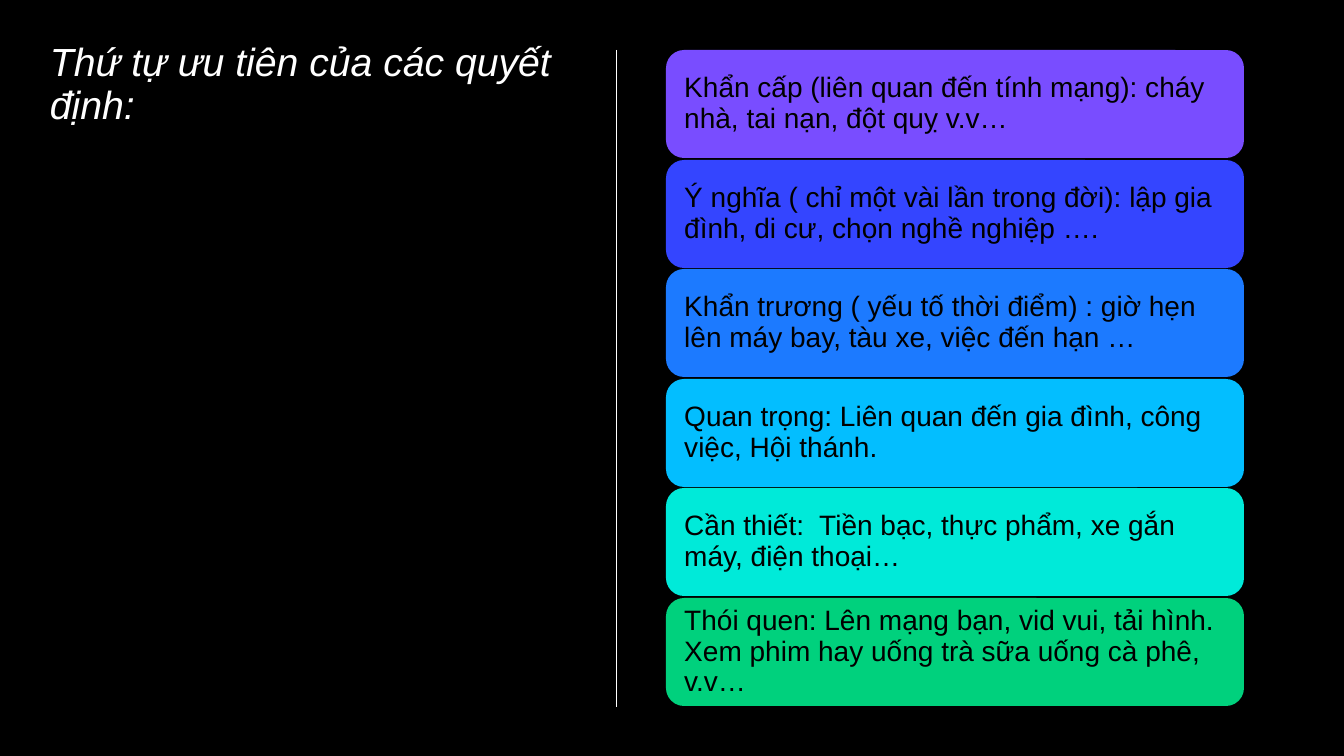
"""Build a slide ranking six kinds of decisions by priority."""
from dataclasses import dataclass

from lxml import etree
from pptx import Presentation
from pptx.dml.color import RGBColor
from pptx.enum.shapes import MSO_CONNECTOR, MSO_SHAPE
from pptx.enum.text import MSO_ANCHOR, PP_ALIGN
from pptx.oxml.ns import qn
from pptx.slide import Slide
from pptx.text.text import TextFrame
from pptx.util import Emu, Pt

ROUND_RECT = MSO_SHAPE.ROUNDED_RECTANGLE
STRAIGHT = MSO_CONNECTOR.STRAIGHT
TOP = MSO_ANCHOR.TOP
MIDDLE = MSO_ANCHOR.MIDDLE
LEFT = PP_ALIGN.LEFT

EMU_PER_PX = 914400 / 100.8


@dataclass(frozen=True)
class Theme:
    background: str = "000000"
    light: str = "FFFFFF"
    dark: str = "000000"
    font: str = "Arial"
    title_size: int = 28
    card_size: int = 20
    rule_width: float = 0.75
    line_spacing: float = 0.9


@dataclass(frozen=True)
class Box:
    left: int
    top: int
    width: int
    height: int

    def emu(self) -> tuple[Emu, Emu, Emu, Emu]:
        return px(self.left), px(self.top), px(self.width), px(self.height)


@dataclass(frozen=True)
class Card:
    fill: str
    text: str


THEME = Theme()
TITLE = "Thứ tự ưu tiên của các quyết định:"
TITLE_BOX = Box(50, 43, 517, 657)
RULE_X, RULE_TOP, RULE_BOTTOM = 617, 50, 707
FIRST_CARD = Box(666, 50, 578, 108)
LAST_CARD_TOP = 598
CARD_INSET = 13
CARDS = [
    Card("794DFF", "Khẩn cấp (liên quan đến tính mạng): cháy nhà, tai nạn, đột quỵ v.v…"),
    Card("3445FF", "Ý nghĩa ( chỉ một vài lần trong đời): lập gia đình, di cư, chọn nghề nghiệp …."),
    Card("1C7AFF", "Khẩn trương ( yếu tố thời điểm) : giờ hẹn lên máy bay, tàu xe, việc đến hạn …"),
    Card("03BEFF", "Quan trọng: Liên quan đến gia đình, công việc, Hội thánh."),
    Card("00EAD9", "Cần thiết:  Tiền bạc, thực phẩm, xe gắn máy, điện thoại…"),
    Card("00D17D", "Thói quen: Lên mạng bạn, vid vui, tải hình. "
                   "Xem phim hay uống trà sữa uống cà phê, v.v…"),
]


def px(n: int) -> Emu:
    return Emu(round(n * EMU_PER_PX))


def rgb(value: str) -> RGBColor:
    return RGBColor.from_string(value)


def write_text(tf: TextFrame, text: str, size: int, color: str, inset: int = 0,
               anchor: MSO_ANCHOR = TOP, italic: bool = False) -> None:
    tf.text = text
    tf.word_wrap = True
    tf.vertical_anchor = anchor
    tf.margin_left = tf.margin_right = tf.margin_top = tf.margin_bottom = px(inset)
    p = tf.paragraphs[0]
    p.alignment = LEFT
    p.line_spacing = THEME.line_spacing
    font = p.runs[0].font
    font.name = THEME.font
    font.size = Pt(size)
    font.italic = italic
    font.color.rgb = rgb(color)


def add_title(s: Slide) -> None:
    tf = s.shapes.add_textbox(*TITLE_BOX.emu()).text_frame
    write_text(tf, TITLE, THEME.title_size, THEME.light, italic=True)


def add_rule(s: Slide) -> None:
    line = s.shapes.add_connector(
        STRAIGHT, px(RULE_X), px(RULE_TOP), px(RULE_X), px(RULE_BOTTOM))
    line.line.color.rgb = rgb(THEME.light)
    line.line.width = Pt(THEME.rule_width)
    etree.SubElement(line._element.spPr, qn("a:effectLst"))


def add_card(s: Slide, card: Card, box: Box) -> None:
    sp = s.shapes.add_shape(ROUND_RECT, *box.emu())
    sp.shadow.inherit = False
    sp.fill.solid()
    sp.fill.fore_color.rgb = rgb(card.fill)
    sp.line.fill.background()
    write_text(sp.text_frame, card.text, THEME.card_size, THEME.dark, CARD_INSET, MIDDLE)


def add_cards(s: Slide) -> None:
    pitch = (LAST_CARD_TOP - FIRST_CARD.top) / (len(CARDS) - 1)
    for i, card in enumerate(CARDS):
        top = round(FIRST_CARD.top + i * pitch)
        add_card(s, card, Box(FIRST_CARD.left, top, FIRST_CARD.width, FIRST_CARD.height))


def main() -> None:
    prs = Presentation()
    prs.slide_width, prs.slide_height = px(1344), px(756)
    s = prs.slides.add_slide(prs.slide_layouts[6])
    s.background.fill.solid()
    s.background.fill.fore_color.rgb = rgb(THEME.background)
    add_title(s)
    add_rule(s)
    add_cards(s)
    prs.save("out.pptx")


if __name__ == "__main__":
    main()
